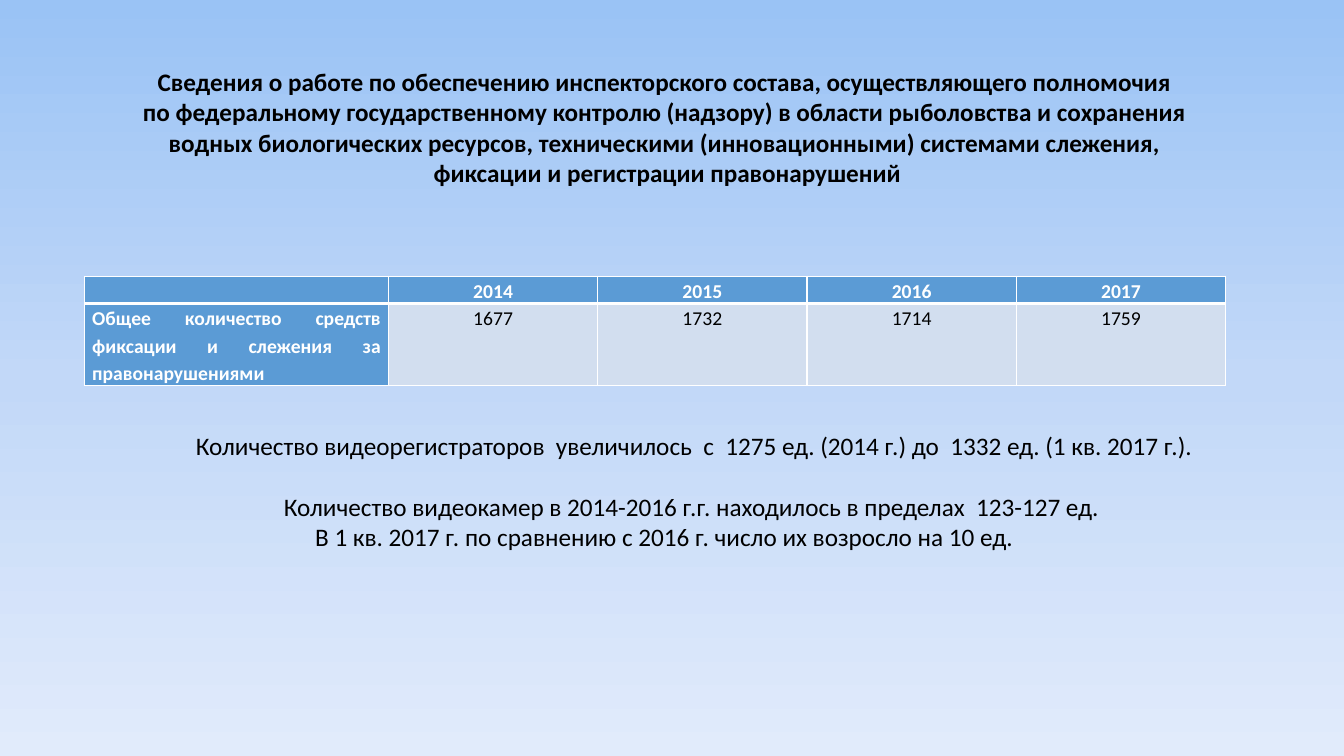
from copy import deepcopy

from lxml import etree
from pptx import Presentation
from pptx.dml.color import RGBColor
from pptx.enum import text
from pptx.oxml import ns
from pptx.util import Pt

FONT = "Calibri"
BLACK = RGBColor(0x00, 0x00, 0x00)
WHITE = RGBColor(0xFF, 0xFF, 0xFF)
BLUE = RGBColor(0x5B, 0x9B, 0xD5)
PALE = RGBColor(0xD2, 0xDE, 0xEF)
SKY = [RGBColor(0x9A, 0xC3, 0xF5), RGBColor(0xC2, 0xD8, 0xF8), RGBColor(0xE1, 0xEB, 0xFB)]
MID, JUST = text.PP_ALIGN.CENTER, text.PP_ALIGN.JUSTIFY

TITLE = [
    "Сведения о работе по обеспечению инспекторского состава, осуществляющего полномочия ",
    "по федеральному государственному контролю (надзору) в области рыболовства и сохранения ",
    "водных биологических ресурсов, техническими (инновационными) системами слежения, ",
    "фиксации и регистрации правонарушений",
]
ROWS = [
    ["", "2014", "2015", "2016", "2017"],
    ["Общее количество средств фиксации и слежения за правонарушениями",
     "1677", "1732", "1714", "1759"],
]
# Wording, left indent, right indent, space before
NOTES = [
    ("Количество видеорегистраторов  увеличилось  с  1275 ед. (2014 г.) до  1332 ед. (1 кв. 2017 г.).",
     38, 0, 0),
    ("Количество видеокамер в 2014-2016 г.г. находилось в пределах  123-127 ед.", 34, 0, 22),
    ("В 1 кв. 2017 г. по сравнению с 2016 г. число их возросло на 10 ед.", 0, 5, 0),
]


def add_run(para, words, size, color=BLACK, bold=False):
    run = para.add_run()
    run.text = words
    font = run.font
    font.name, font.size, font.bold = FONT, Pt(size), bold
    font.color.rgb = color


def add_box(slide, box):
    frame = slide.shapes.add_textbox(*map(Pt, box)).text_frame
    frame.word_wrap = True
    return frame


def paint(slide):
    """Vertical three-stop gradient behind the slide."""
    fill = slide.background.fill
    fill.gradient()
    fill.gradient_angle = 270
    stops = fill._fill._gradFill.find(ns.qn("a:gsLst"))
    stops.insert(1, deepcopy(stops[0]))
    for stop, color, place in zip(fill.gradient_stops, SKY, (0, 0.5, 1)):
        stop.color.rgb, stop.position = color, place


def add_title(slide, box):
    para = add_box(slide, box).paragraphs[0]
    para.alignment = MID
    for i, line in enumerate(TITLE):
        if i:
            para.add_line_break()
        add_run(para, line, 18, bold=True)


def set_edge(cell, side, width):
    # Borders must come before the cell's fill
    props = cell._tc.get_or_add_tcPr()
    line = etree.SubElement(props, ns.qn("a:" + side), w=str(Pt(width)))
    fill = etree.SubElement(line, ns.qn("a:solidFill"))
    etree.SubElement(fill, ns.qn("a:srgbClr"), val=str(WHITE))


def fill_cell(cell, words, head, side):
    strong = head or side
    for edge in ("lnL", "lnR", "lnT", "lnB"):
        thick = edge == ("lnB" if head else "lnT")
        set_edge(cell, edge, 3 if thick else 1)
    cell.fill.solid()
    cell.fill.fore_color.rgb = BLUE if strong else PALE
    cell.margin_left = cell.margin_right = Pt(5.4)
    cell.margin_top = cell.margin_bottom = 0
    para = cell.text_frame.paragraphs[0]
    para.alignment = JUST if side else MID
    para.line_spacing, para.space_after = 1.15, Pt(6)
    if words:
        add_run(para, words, 14, WHITE if strong else BLACK, strong)
    else:
        # Keeps the empty corner as low as its row
        etree.SubElement(para._p, ns.qn("a:endParaRPr"), sz="1400")


def add_grid(slide, box):
    left, top, width, height = box
    side, head = 217, 19.5
    grid = slide.shapes.add_table(len(ROWS), len(ROWS[0]), *map(Pt, box)).table
    grid.horz_banding = False
    year = (width - side) / (len(ROWS[0]) - 1)
    for i, col in enumerate(grid.columns):
        col.width = Pt(year if i else side)
    for i, row in enumerate(grid.rows):
        row.height = Pt(height - head if i else head)
        for j, cell in enumerate(row.cells):
            fill_cell(cell, ROWS[i][j], i == 0, j == 0)


def add_notes(slide, box):
    frame = add_box(slide, box)
    for i, (words, left, right, gap) in enumerate(NOTES):
        para = frame.add_paragraph() if i else frame.paragraphs[0]
        para.alignment, para.space_before = MID, Pt(gap)
        props = para._p.get_or_add_pPr()
        props.set("marL", str(Pt(left)))
        props.set("marR", str(Pt(right)))
        add_run(para, words, 18)


def main():
    deck = Presentation()
    deck.slide_width, deck.slide_height = Pt(960), Pt(540)
    slide = deck.slides.add_slide(deck.slide_layouts[6])
    paint(slide)
    add_title(slide, (49.7, 44, 854, 94.5))
    add_grid(slide, (60.5, 197.3, 815, 78))
    add_notes(slide, (62, 304, 830, 94.5))
    deck.save("out.pptx")


if __name__ == "__main__":
    main()
